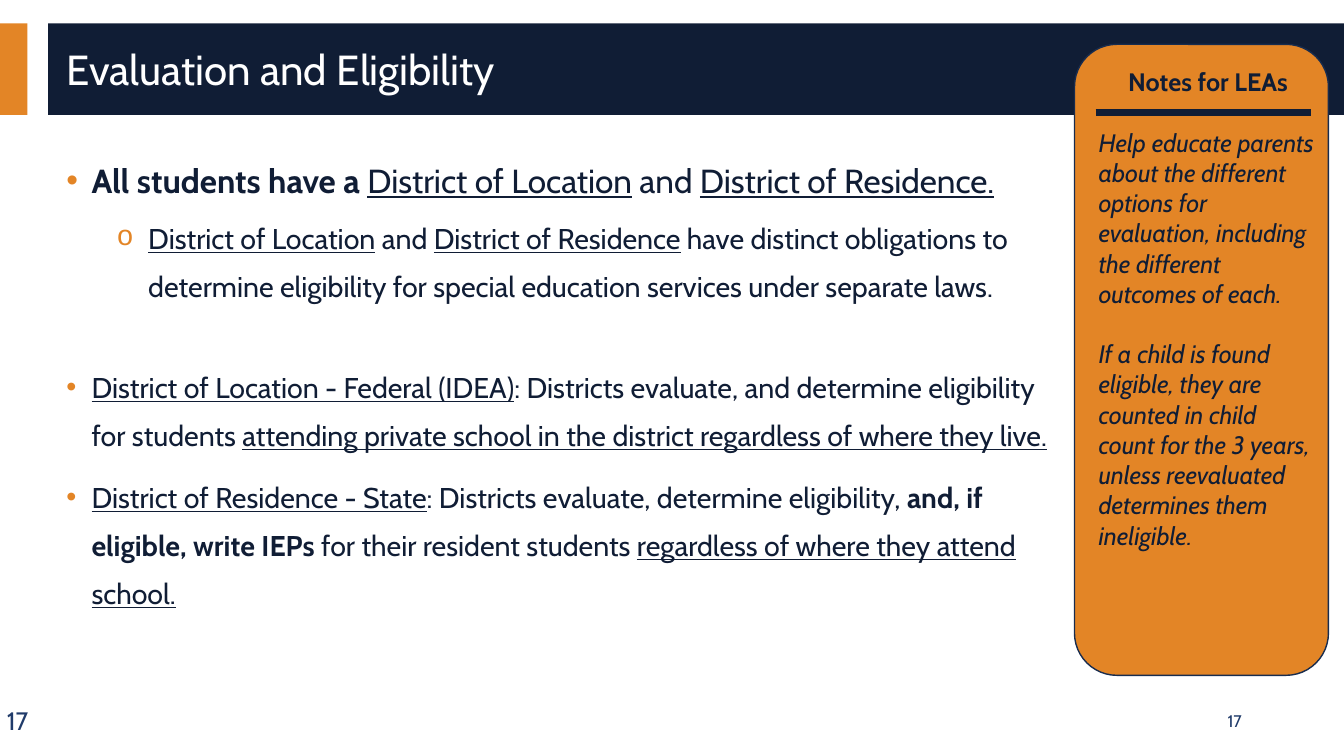
from pptx import Presentation
from pptx.dml.color import RGBColor
from pptx.enum.shapes import MSO_CONNECTOR, MSO_SHAPE as SHAPE
from pptx.enum.text import MSO_ANCHOR as ANCHOR, MSO_AUTO_SIZE, PP_ALIGN as ALIGN
from pptx.oxml.ns import qn
from pptx.util import Pt
from lxml.etree import SubElement

FONT = "Cabin"
ORANGE = RGBColor(0xE3, 0x85, 0x26)
NAVY = RGBColor(0x10, 0x1D, 0x35)
OUTLINE = RGBColor(0x18, 0x2C, 0x4E)
NUMBER_BLUE = RGBColor(0x20, 0x3B, 0x6A)
WHITE = RGBColor(0xFF, 0xFF, 0xFF)

# Each point: level, size, space before, runs of (text, style); b = bold, u = underlined
POINTS = [
    (0, 23.8, 0, [
        ("All students have a ", "b"), ("District of Location", "u"),
        (" and ", ""), ("District of Residence.", "u")]),
    (1, 20.4, 5, [
        ("District of Location", "u"), (" and ", ""), ("District of Residence", "u"),
        (" have distinct obligations to determine eligibility for special "
         "education services under separate laws.", "")]),
    (0, 20.4, 38, [
        ("District of Location - Federal (IDEA)", "u"),
        (": Districts evaluate, and determine eligibility for students ", ""),
        ("attending private school in the district regardless of where they live.", "u")]),
    (0, 20.4, 10, [
        ("District of Residence - State", "u"),
        (": Districts evaluate, determine eligibility, ", ""),
        ("and, if eligible, write IEPs ", "b"),
        ("for their resident students ", ""),
        ("regardless of where they attend school.", "u")]),
]
# Per level: bullet, bullet font, left margin, hanging indent
BULLETS = [("•", "Arial", 18, 18), ("o", "Courier New", 58.5, 22.5)]

NOTES = [
    "Help educate parents about the different options for evaluation, "
    "including the different outcomes of each.",
    "If a child is found eligible, they are counted in child count for the "
    "3 years, unless reevaluated determines them ineligible.",
]


def add_panel(page, kind, left, top, width, height, fill, line=None):
    panel = page.shapes.add_shape(kind, Pt(left), Pt(top), Pt(width), Pt(height))
    panel.shadow.inherit = False
    panel.fill.solid()
    panel.fill.fore_color.rgb = fill
    if line is None:
        panel.line.fill.background()
    else:
        panel.line.color.rgb = line
        panel.line.width = Pt(1)


def add_rule(page, left, right, y, color, width):
    rule = page.shapes.add_connector(MSO_CONNECTOR.STRAIGHT, Pt(left), Pt(y), Pt(right), Pt(y))
    rule.line.color.rgb = color
    rule.line.width = Pt(width)
    SubElement(rule.element.spPr, qn("a:effectLst"))


def add_text_box(page, left, top, width, height, wrap=True, anchor=ANCHOR.TOP):
    box = page.shapes.add_textbox(Pt(left), Pt(top), Pt(width), Pt(height))
    frame = box.text_frame
    frame.word_wrap = wrap
    frame.vertical_anchor = anchor
    return frame


def next_paragraph(frame):
    """Return the empty first paragraph, or a new one once it is in use."""
    first = frame.paragraphs[0]
    return frame.add_paragraph() if first.runs else first


def add_span(para, text, size, color, style=""):
    """Add a run; style holds any of b (bold), i (italic), u (underline)."""
    span = para.add_run()
    span.text = text
    font = span.font
    font.name = FONT
    font.size = Pt(size)
    font.color.rgb = color
    font.bold = "b" in style
    font.italic = "i" in style
    font.underline = "u" in style


def set_bullet(para, level):
    mark, typeface, margin, hang = BULLETS[level]
    para.level = level
    props = para._p.get_or_add_pPr()
    props.set("marL", str(Pt(margin)))
    props.set("indent", str(-Pt(hang)))
    color = SubElement(props, qn("a:buClr"))
    SubElement(color, qn("a:srgbClr"), val=str(ORANGE))
    SubElement(props, qn("a:buFont"), typeface=typeface)
    SubElement(props, qn("a:buChar"), char=mark)


def add_title(page, text):
    title = page.shapes.title
    title.left, title.top, title.width, title.height = Pt(40.3), Pt(21.6), Pt(919.7), Pt(59)
    title.element.getparent().append(title.element)  # in front of the band
    frame = title.text_frame
    frame.auto_size = MSO_AUTO_SIZE.NONE
    frame.word_wrap = True
    frame.vertical_anchor = ANCHOR.MIDDLE
    para = frame.paragraphs[0]
    para.alignment = ALIGN.LEFT
    para.line_spacing = 0.9
    add_span(para, text, 30, WHITE)


def add_points(page):
    frame = add_text_box(page, 40.3, 99.4, 727.2, 383)
    for level, size, space, spans in POINTS:
        para = next_paragraph(frame)
        set_bullet(para, level)
        para.line_spacing = 1.4
        para.space_before = Pt(space)
        for text, style in spans:
            add_span(para, text, size, NAVY, style)


def add_notes_card(page):
    add_panel(page, SHAPE.ROUNDED_RECTANGLE, 767.5, 31.7, 181.4, 450.7, ORANGE, OUTLINE)
    frame = add_text_box(page, 777.6, 43.9, 170.6, 443.5)
    heading = next_paragraph(frame)
    heading.alignment = ALIGN.CENTER
    add_span(heading, "Notes for LEAs", 18, NAVY, "b")
    for note in NOTES:
        para = next_paragraph(frame)
        para.space_before = Pt(21.6)
        add_span(para, note, 18, NAVY, "i")
    add_rule(page, 782.6, 936.7, 80.6, NAVY, 5.25)


def add_page_number(page, left, width, size, align, **layout):
    frame = add_text_box(page, left, 500.4, width, 28.8, **layout)
    para = frame.paragraphs[0]
    para.alignment = align
    add_span(para, "17", size, NUMBER_BLUE)


def main():
    deck = Presentation()
    deck.slide_width, deck.slide_height = Pt(960), Pt(540)
    page = deck.slides.add_slide(deck.slide_layouts[5])
    add_panel(page, SHAPE.RECTANGLE, 0, 16.6, 19.6, 65.5, ORANGE)
    add_panel(page, SHAPE.RECTANGLE, 34.4, 16.6, 925.6, 65.5, NAVY)
    add_title(page, "Evaluation and Eligibility")
    add_page_number(page, -2.2, 36.7, 18, ALIGN.LEFT, wrap=False)
    add_page_number(page, 678.2, 216, 12, ALIGN.RIGHT, anchor=ANCHOR.MIDDLE)
    add_notes_card(page)
    add_points(page)
    deck.save("out.pptx")


if __name__ == "__main__":
    main()
